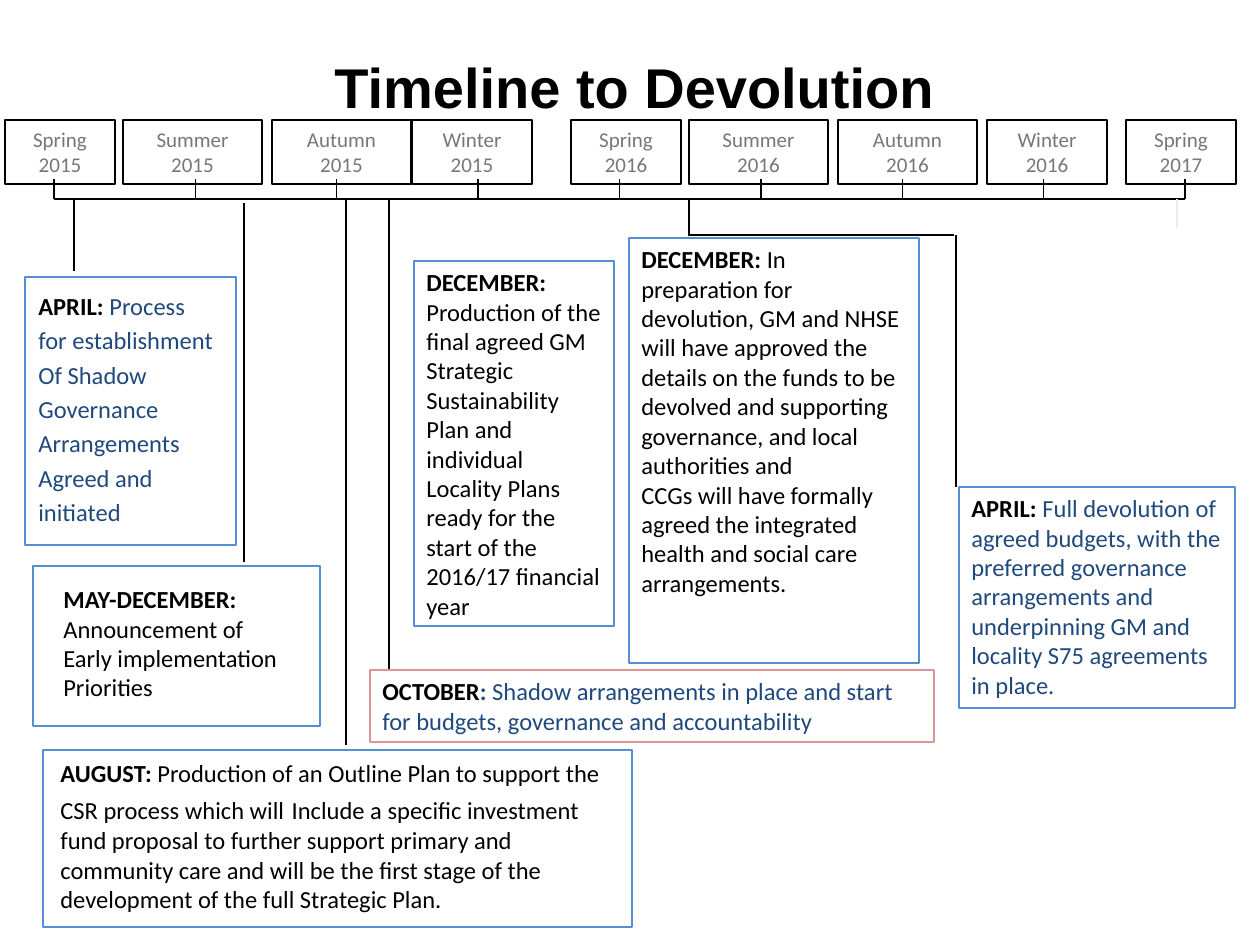
from lxml import etree
from pptx import Presentation
from pptx.dml.color import RGBColor
from pptx.enum.shapes import MSO_CONNECTOR, MSO_SHAPE
from pptx.enum.text import MSO_ANCHOR, MSO_AUTO_SIZE, PP_ALIGN
from pptx.oxml.ns import qn
from pptx.util import Emu, Pt

STRAIGHT = MSO_CONNECTOR.STRAIGHT
RECTANGLE = MSO_SHAPE.RECTANGLE
TOP, MIDDLE, BOTTOM = MSO_ANCHOR.TOP, MSO_ANCHOR.MIDDLE, MSO_ANCHOR.BOTTOM
LEFT, CENTER = PP_ALIGN.LEFT, PP_ALIGN.CENTER
NO_AUTOFIT = MSO_AUTO_SIZE.NONE

PIXELS_PER_INCH = 126
COLORS = {
    "black": "000000",
    "season": "777777",
    "navy": "1F497D",
    "blue": "558ED5",
    "pink": "D99694",
    "cream": "EEECE1",
}


def px(length):
    return Emu(round(length * 914400 / PIXELS_PER_INCH))


def color(name):
    return RGBColor.from_string(COLORS[name])


def place(shape, box):
    shape.left, shape.top, shape.width, shape.height = map(px, box)


def add_line(page, start, end, line_color="black"):
    line = page.shapes.add_connector(STRAIGHT, *map(px, (*start, *end)))
    line.line.color.rgb = color(line_color)
    line.line.width = Pt(0.75)
    etree.SubElement(line._element.spPr, qn("a:effectLst"))


def add_frame(page, box, line_color):
    frame = page.shapes.add_shape(RECTANGLE, *map(px, box))
    frame.shadow.inherit = False
    frame.fill.background()
    frame.line.color.rgb = color(line_color)
    frame.line.width = Pt(0.75)
    return frame


def write(shape, paragraphs, font="Calibri", align=LEFT, anchor=TOP, before=0):
    text = shape.text_frame
    text.word_wrap = True
    text.auto_size = NO_AUTOFIT
    text.vertical_anchor = anchor
    for index, spans in enumerate(paragraphs):
        para = text.paragraphs[0] if index == 0 else text.add_paragraph()
        para.alignment = align
        para.space_before = Pt(before)
        for words, size, bold, text_color in spans:
            span = para.add_run()
            span.text = words
            span.font.name = font
            span.font.size = Pt(size)
            span.font.bold = bold
            span.font.color.rgb = color(text_color)


def heading(words):
    return words, 14, True, "black"


def body(words, text_color="black", size=14):
    return words, size, False, text_color


def add_title(page, box):
    title = page.shapes.title
    place(title, box)
    write(title, [[("Timeline to Devolution", 32, True, "black")]],
          font="Arial", align=CENTER, anchor=BOTTOM)


def add_seasons(page, box):
    left, top, width, height = box
    widths = {"Spring": 110, "Summer": 139, "Autumn": 139, "Winter": 120}
    offsets = (0, 118, 267, 407, 566, 684, 833, 982, 1121)
    names = list(widths)
    axis_left, axis_right, axis_top = left + 49, left + 1180, top + 79
    step = (axis_right - axis_left) / (len(offsets) - 1)
    add_line(page, (axis_left, axis_top), (axis_right, axis_top))
    for index, offset in enumerate(offsets):
        year, season = divmod(index, len(names))
        name = names[season]
        tick = axis_left + index * step
        add_line(page, (tick, axis_top), (tick, axis_top - 20))
        frame = add_frame(page, (left + offset, top, widths[name], height), "black")
        write(frame, [[body(f"{name} {2015 + year}", "season", 12)]],
              align=CENTER, anchor=MIDDLE)


def add_card(page, box, paragraphs, line_color="blue", text_box=None, before=0):
    holder = add_frame(page, box, line_color)
    if text_box:
        left, top, width, height = text_box
        holder = page.shapes.add_textbox(
            *map(px, (box[0] + left, box[1] + top, width, height)))
    write(holder, paragraphs, before=before)


def add_leaders(page):
    for start, end in (
        ((74, 199), (74, 271)),
        ((244, 203), (244, 562)),
        ((346, 200), (346, 745)),
        ((389, 200), (389, 670)),
        ((689, 200), (689, 235)),
        ((954, 235), (688, 235)),
        ((956, 235), (956, 487)),
    ):
        add_line(page, start, end)
    add_line(page, (1177, 199), (1177, 228), "cream")


def add_cards(page):
    shadow_lines = ("for establishment", "Of Shadow", "Governance",
                    "Arrangements", "Agreed and", "initiated")
    add_card(page, (25, 277, 211, 268),
             [[heading("APRIL:"), body(" Process", "navy")]]
             + [[body(line, "navy")] for line in shadow_lines],
             text_box=(1, 8, 226, 251), before=2.8)
    add_card(page, (43, 750, 589, 177), [[
        heading("AUGUST:"),
        body(" Production of an Outline Plan to support the CSR process which will"),
        body(" ", size=18),
        body("Include a specific investment fund proposal to further support "
             "primary and community care and will be the first stage of the "
             "development of the full Strategic Plan."),
    ]], text_box=(5, 2, 577, 170))
    add_card(page, (414, 261, 200, 365), [[
        heading("DECEMBER:"),
        body(" Production of the final agreed GM Strategic Sustainability Plan "
             "and individual Locality Plans ready for the start of the 2016/17 "
             "financial year"),
    ]])
    add_card(page, (629, 238, 290, 425), [
        [heading("DECEMBER:"),
         body(" In preparation for devolution, GM and NHSE will have approved the "
              "details on the funds to be devolved and supporting governance, and "
              "local authorities and")],
        [body("CCGs will have formally agreed the integrated health and social "
              "care arrangements.")],
    ])
    add_card(page, (959, 487, 276, 221), [[
        heading("APRIL: "),
        body("Full devolution of agreed budgets, with the preferred governance "
             "arrangements and underpinning GM and locality S75 agreements in "
             "place.", "navy"),
    ]])
    add_card(page, (33, 566, 287, 160), [
        [heading("MAY-DECEMBER:")],
        [body("Announcement of")],
        [body("Early implementation Priorities")],
    ], text_box=(18, 12, 265, 130))
    add_card(page, (370, 670, 564, 72), [[
        heading("OCTOBER"),
        (": ", 14, True, "navy"),
        body("Shadow arrangements in place and start for budgets, governance "
             "and accountability", "navy"),
    ]], line_color="pink")


def main():
    deck = Presentation()
    deck.slide_width, deck.slide_height = px(1260), px(945)
    page = deck.slides.add_slide(deck.slide_layouts[5])
    add_title(page, (33, 45, 1203, 81))
    add_seasons(page, (5, 120, 1230, 64))
    add_leaders(page)
    add_cards(page)
    deck.save("out.pptx")


if __name__ == "__main__":
    main()
